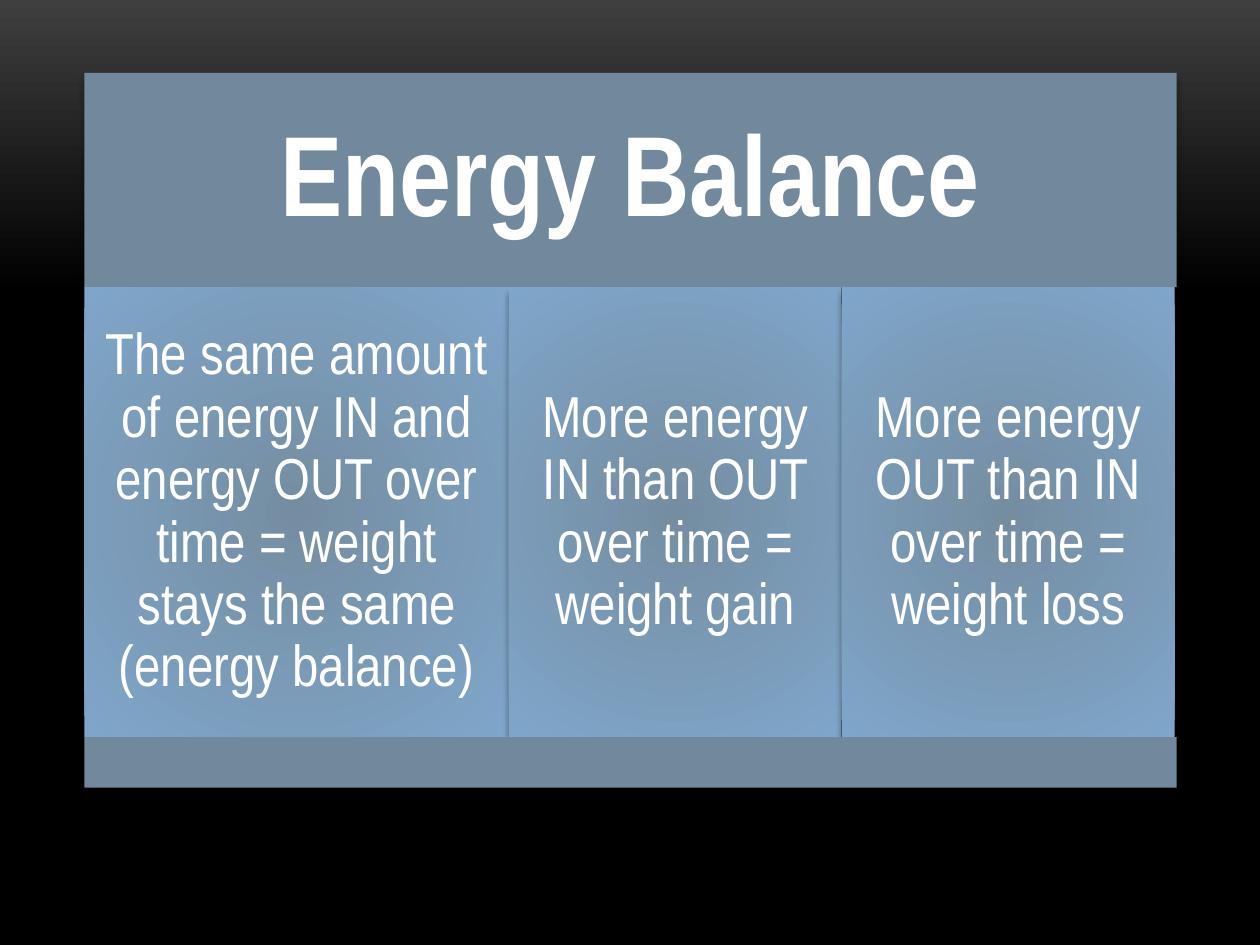
from lxml.etree import SubElement
from pptx import Presentation
from pptx.dml.color import RGBColor
from pptx.enum.shapes import MSO_SHAPE
from pptx.enum.text import MSO_ANCHOR, MSO_AUTO_SIZE, PP_ALIGN
from pptx.oxml.ns import qn
from pptx.util import Cm, Pt

WHITE = RGBColor(0xFF, 0xFF, 0xFF)
BLACK = RGBColor(0x00, 0x00, 0x00)
CHARCOAL = RGBColor(0x3F, 0x3F, 0x3F)
SLATE = RGBColor(0x72, 0x89, 0x9D)
STEEL = RGBColor(0x75, 0x8D, 0xA1)
SKY = RGBColor(0x7F, 0xA6, 0xCA)

LEFT, TOP, WIDTH = 1.7, 1.47, 22.02
HEADER_HEIGHT, BODY_HEIGHT, FOOTER_HEIGHT = 4.32, 9.07, 1.02
BALANCES = [
    (8.56, "The same amount of energy IN and energy OUT over time = weight stays the same (energy balance)"),
    (6.71, "More energy IN than OUT over time = weight gain"),
    (6.71, "More energy OUT than IN over time = weight loss"),
]


def add(parent, tag, **attributes):
    return SubElement(parent, qn(tag), {key: str(value) for key, value in attributes.items()})


def set_gradient(fill, owner, stops, radial=False):
    fill.gradient()
    gradient = owner.find(".//" + qn("a:gradFill"))
    for child in list(gradient):
        gradient.remove(child)
    stop_list = add(gradient, "a:gsLst")
    for percent, color in stops:
        add(add(stop_list, "a:gs", pos=percent * 1000), "a:srgbClr", val=color)
    if radial:
        center = add(gradient, "a:path", path="circle")
        add(center, "a:fillToRect", **dict.fromkeys("ltrb", 100000))
    else:
        add(gradient, "a:lin", ang=5400000, scaled=0)


def write_text(shape, text, size, margin, bold=False, font="Arial Narrow", color=WHITE):
    frame = shape.text_frame
    frame.text = text
    frame.word_wrap = True
    frame.auto_size = MSO_AUTO_SIZE.NONE
    frame.vertical_anchor = MSO_ANCHOR.MIDDLE
    frame.margin_left = frame.margin_right = Cm(margin)
    frame.margin_top = frame.margin_bottom = Cm(margin)
    paragraph = frame.paragraphs[0]
    paragraph.alignment = PP_ALIGN.CENTER
    paragraph.line_spacing = 0.9
    paragraph.font.name = font
    paragraph.font.size = Pt(size)
    paragraph.font.bold = bold
    paragraph.font.color.rgb = color


class EnergySlide:
    """Holds the panel style and the slide being built."""

    def __init__(self, deck):
        self.slide = deck.slides.add_slide(deck.slide_layouts[5])

    def background(self):
        set_gradient(self.slide.background.fill, self.slide.element,
                     [(0, CHARCOAL), (31, BLACK), (100, BLACK)])

    def finish(self, panel):
        panel.line.fill.background()
        panel.shadow.inherit = False
        effects = panel.element.spPr.find(qn("a:effectLst"))
        shadow = add(effects, "a:outerShdw", blurRad=Pt(4), dist=Pt(3.4), dir=5400000, rotWithShape=0)
        add(add(shadow, "a:srgbClr", val=BLACK), "a:alpha", val=40000)

    def panel(self, left, top, width, height):
        return self.slide.shapes.add_shape(
            MSO_SHAPE.RECTANGLE, Cm(left), Cm(top), Cm(width), Cm(height))

    def header(self, text):
        title = self.slide.shapes.title
        title.left, title.top = Cm(LEFT), Cm(TOP)
        title.width, title.height = Cm(WIDTH), Cm(HEADER_HEIGHT)
        title.fill.solid()
        title.fill.fore_color.rgb = SLATE
        self.finish(title)
        write_text(title, text, size=65, margin=0.69, bold=True)

    def column(self, left, top, width, text):
        column = self.panel(left, top, width, BODY_HEIGHT)
        set_gradient(column.fill, column.element, [(0, STEEL), (100, SKY)], radial=True)
        self.finish(column)
        write_text(column, text, size=33, margin=0.36)

    def footer(self, top):
        footer = self.panel(LEFT, top, WIDTH, FOOTER_HEIGHT)
        footer.fill.solid()
        footer.fill.fore_color.rgb = SLATE
        self.finish(footer)


def main():
    deck = Presentation()
    deck.slide_width, deck.slide_height = Cm(25.4), Cm(19.05)
    energy = EnergySlide(deck)
    energy.background()
    energy.header("Energy Balance")
    left, body_top = LEFT, TOP + HEADER_HEIGHT
    for width, balance in BALANCES:
        energy.column(left, body_top, width, balance)
        left += width
    energy.footer(body_top + BODY_HEIGHT)
    deck.save("out.pptx")


if __name__ == "__main__":
    main()
